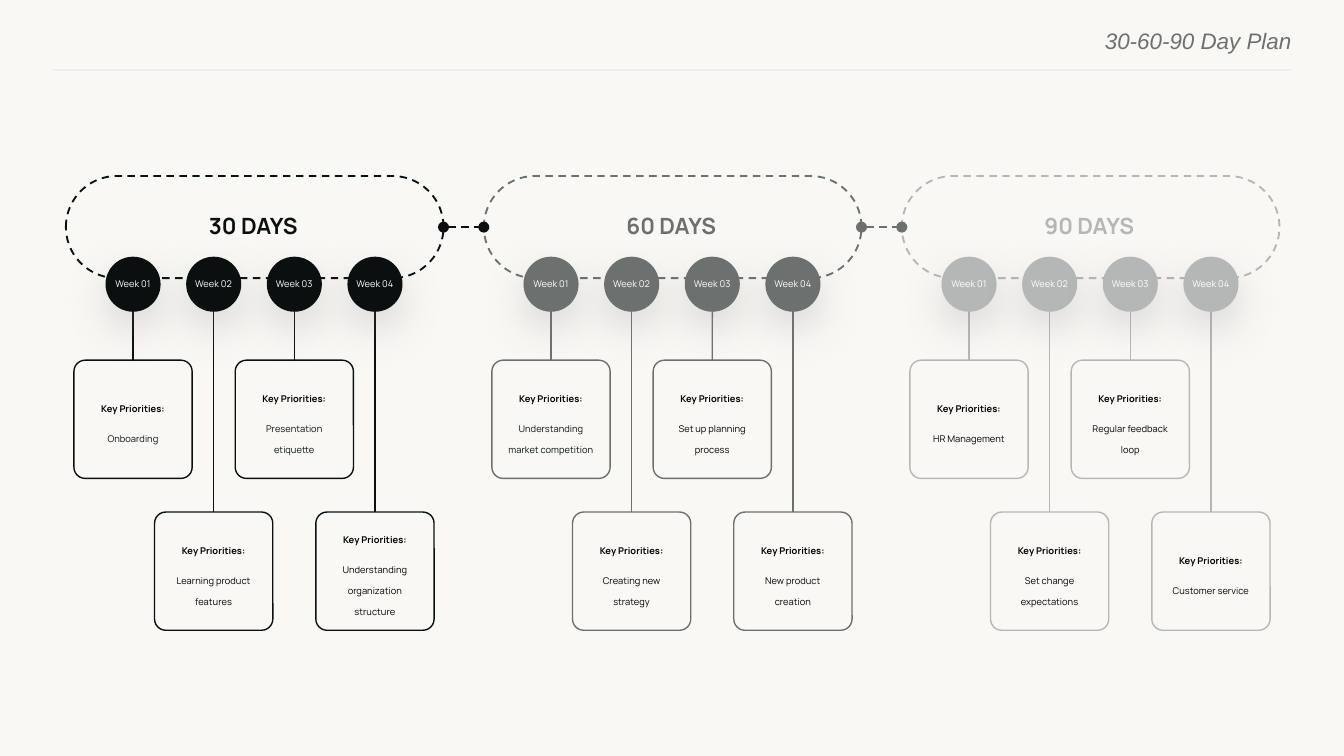
"""Build a 30-60-90 day plan slide with weekly priorities."""
from lxml.etree import SubElement
from pptx import Presentation
from pptx.dml.color import RGBColor
from pptx.enum.dml import MSO_LINE
from pptx.enum.shapes import MSO_CONNECTOR, MSO_SHAPE
from pptx.enum.text import MSO_ANCHOR, PP_ALIGN
from pptx.oxml.ns import qn
from pptx.util import Inches, Pt

COLORS = {
    "paper": "F9F8F5", "rule": "EFEFEF", "ink": "09100F", "slate": "6C706F",
    "mist": "B5B7B7", "black": "000000", "white": "FFFFFF", "shade": "7F7F7F",
}
PHASES = [
    ("30 DAYS", "ink", ["Onboarding", "Learning product features",
                        "Presentation etiquette",
                        "Understanding organization structure"]),
    ("60 DAYS", "slate", ["Understanding market competition",
                          "Creating new strategy",
                          "Set up planning process", "New product creation"]),
    ("90 DAYS", "mist", ["HR Management", "Set change expectations",
                         "Regular feedback loop", "Customer service"]),
]
INKED = {"Onboarding", "Presentation etiquette",
         "Understanding market competition"}
LEFT, PITCH, STEP = 0.49, 3.11, 0.6
PILL, DOT, CARD = (2.81, 0.76), 0.41, 0.88
TOPS = (2.68, 3.81)


def color(name):
    return RGBColor.from_string(COLORS[name])


def style(par, size, tint, bold=False, face="Manrope", align=PP_ALIGN.CENTER):
    par.alignment = align
    font = par.font
    font.name, font.size, font.bold = face, Pt(size), bold
    font.color.rgb = color(tint)


def pad(frame, x, y):
    frame.margin_left = frame.margin_right = Inches(x)
    frame.margin_top = frame.margin_bottom = Inches(y)
    frame.word_wrap = True


def add_text(slide, box, text, inset=(0, 0), **look):
    frame = slide.shapes.add_textbox(*map(Inches, box)).text_frame
    pad(frame, *inset)
    par = frame.paragraphs[0]
    par.text = text
    style(par, 12, **look)
    return par


def add_form(slide, kind, box, fill=None, edge=None, width=0.75):
    form = slide.shapes.add_shape(kind, *map(Inches, box))
    form.shadow.inherit = False
    if fill:
        form.fill.solid()
        form.fill.fore_color.rgb = color(fill)
    else:
        form.fill.background()
    if edge:
        form.line.color.rgb = color(edge)
        form.line.width = Pt(width)
    else:
        form.line.fill.background()
    form.text_frame.vertical_anchor = MSO_ANCHOR.MIDDLE
    return form


def add_line(slide, start, end, tint, width=0.75):
    line = slide.shapes.add_connector(
        MSO_CONNECTOR.STRAIGHT, *map(Inches, start + end))
    line.line.color.rgb = color(tint)
    line.line.width = Pt(width)
    SubElement(line._element.spPr, qn("a:effectLst"))
    return line


def add_card(slide, x, top, tint, task):
    box = (x - CARD / 2, top, CARD, CARD)
    card = add_form(slide, MSO_SHAPE.ROUNDED_RECTANGLE, box, "paper", tint)
    card.adjustments[0] = 0.095
    frame = card.text_frame
    pad(frame, 0.07, 0.04)
    head, body = frame.paragraphs[0], frame.add_paragraph()
    head.text, body.text = "Key Priorities:", task
    style(head, 5, "black", bold=True)
    style(body, 5, "ink" if task in INKED else "black")
    head.line_spacing = body.line_spacing = 1.86
    body.space_before = Pt(5)
    stem = add_line(slide, (x, 2.31), (x, top), tint)
    stem.end_connect(card, 0)


def add_week(slide, x, tint, week):
    box = (x - DOT / 2, 1.91, DOT, DOT)
    dot = add_form(slide, MSO_SHAPE.OVAL, box, tint)
    pad(dot.text_frame, 0, 0.04)
    par = dot.text_frame.paragraphs[0]
    par.text = f"Week {week:02}"
    style(par, 5, "white")
    glow = SubElement(dot._element.spPr.find(qn("a:effectLst")),
                      qn("a:outerShdw"), blurRad=str(Pt(22)),
                      dist=str(Pt(8.9)), dir=str(91 * 60000),
                      algn="t", rotWithShape="0")
    shade = SubElement(glow, qn("a:srgbClr"), val=COLORS["shade"])
    SubElement(shade, qn("a:alpha"), val="26000")


def add_phase(slide, left, title, tint, tasks):
    add_text(slide, (left + 0.96, 1.54, 0.87, 0.28), title, (0.07, 0.04),
             tint=tint, bold=True)
    spots = [left + 0.5 + i * STEP for i in range(len(tasks))]
    for i, (x, task) in enumerate(zip(spots, tasks)):
        add_card(slide, x, TOPS[i % 2], tint, task)
    pill = add_form(slide, MSO_SHAPE.ROUNDED_RECTANGLE, (left, 1.31) + PILL,
                    edge=tint, width=1)
    pill.adjustments[0] = 0.5
    pill.line.dash_style = MSO_LINE.DASH
    for week, x in enumerate(spots, 1):
        add_week(slide, x, tint, week)
    return pill


def add_link(slide, first, second, tint):
    link = add_line(slide, (0, 0), (1, 1), tint, 1)
    link.begin_connect(first, 3)
    link.end_connect(second, 1)
    link.line.dash_style = MSO_LINE.DASH
    edge = link.line._get_or_add_ln()
    for end in ("a:headEnd", "a:tailEnd"):
        SubElement(edge, qn(end), type="oval")


def main():
    deck = Presentation()
    deck.slide_width = Inches(10)
    deck.slide_height = Inches(10) * 9 // 16
    slide = deck.slides.add_slide(deck.slide_layouts[6])
    slide.background.fill.solid()
    slide.background.fill.fore_color.rgb = color("paper")
    add_line(slide, (9.61, 0.52), (0.39, 0.52), "rule")
    pills = [add_phase(slide, LEFT + i * PITCH, *phase)
             for i, phase in enumerate(PHASES)]
    for first, second, phase in zip(pills, pills[1:], PHASES):
        add_link(slide, first, second, phase[1])
    title = add_text(slide, (4.92, 0.2, 4.69, 0.18), "30-60-90 Day Plan",
                     tint="slate", face="Arial", align=PP_ALIGN.RIGHT)
    title.font.italic = True
    deck.save("out.pptx")


if __name__ == "__main__":
    main()
